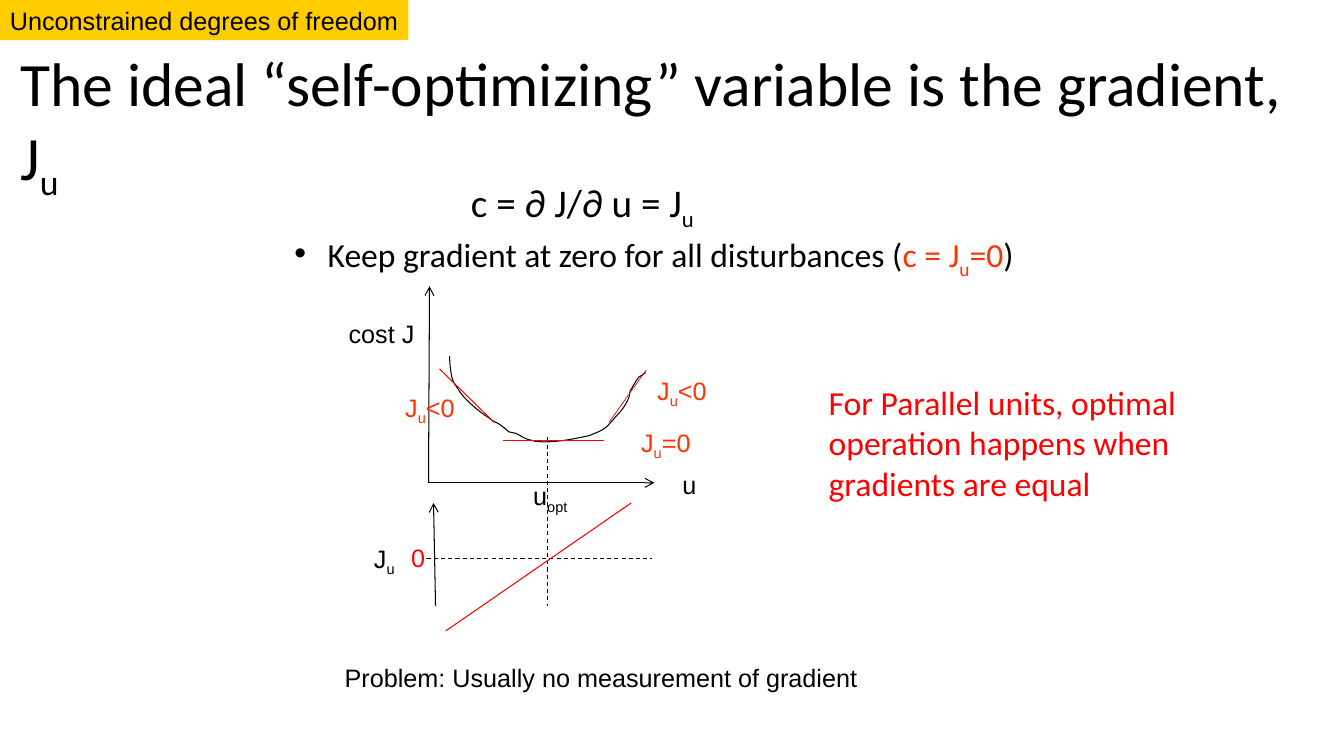
from lxml.etree import SubElement
from pptx import Presentation
from pptx.dml.color import RGBColor
from pptx.enum.dml import MSO_LINE
from pptx.enum.shapes import MSO_CONNECTOR, MSO_SHAPE
from pptx.enum.text import MSO_ANCHOR, MSO_AUTO_SIZE, PP_ALIGN
from pptx.oxml.ns import qn
from pptx.util import Inches, Pt

COLORS = {
    "black": "000000",
    "red": "FF0000",
    "orange": "FF3300",
    "yellow": "FFCC00",
}


def write_text(paragraph, text, size, font, color="black"):
    paragraph.font.size = Pt(size)
    paragraph.font.name = font
    paragraph.alignment = PP_ALIGN.LEFT
    for index, part in enumerate(text.split("_")):
        if part:
            run = paragraph.add_run()
            run.text = part
            run.font.color.rgb = RGBColor.from_string(COLORS[color])
            if index % 2:
                run.font._element.set("baseline", "-25000")


def add_line(start, end, color, width=0.75, dashed=False, arrow=False):
    connector = slide.shapes.add_connector(
        MSO_CONNECTOR.STRAIGHT, *(Inches(value) for value in (*start, *end)))
    connector.line.color.rgb = RGBColor.from_string(COLORS[color])
    connector.line.width = Pt(width)
    if dashed:
        connector.line.dash_style = MSO_LINE.DASH
    if arrow:
        SubElement(connector.line._get_or_add_ln(), qn("a:tailEnd"), type="arrow")
    SubElement(connector._element.spPr, qn("a:effectLst"))


presentation = Presentation()
presentation.slide_width = Inches(13.33)
presentation.slide_height = Inches(7.5)
slide = presentation.slides.add_slide(presentation.slide_layouts[1])

title, body = slide.placeholders
for placeholder, box in ((title, (0.1, 0.51, 13.24, 1.45)), (body, (2.32, 1.41, 9.29, 1.23))):
    placeholder.left, placeholder.top, placeholder.width, placeholder.height = map(Inches, box)
    placeholder.text_frame.auto_size = MSO_AUTO_SIZE.NONE

title.text_frame.vertical_anchor = MSO_ANCHOR.MIDDLE
heading = title.text_frame.paragraphs[0]
heading.line_spacing = 0.9
write_text(heading, "The ideal “self-optimizing” variable is the gradient, J_u_", 44, "Calibri")

body.text_frame.vertical_anchor = MSO_ANCHOR.TOP
body.text_frame.margin_top = Inches(0.37)
formula = body.text_frame.paragraphs[0]
write_text(formula, "c = ∂ J/∂ u = J_u_", 28, "Calibri")
formula.space_before = Pt(0)
formula.line_spacing = 0.9
formula_properties = formula._p.get_or_add_pPr()
formula_properties.set("marL", str(Inches(2.25)))
formula_properties.set("indent", "0")
SubElement(formula_properties, qn("a:buNone"))
formula_properties.append(formula_properties.find(qn("a:defRPr")))

policy = body.text_frame.add_paragraph()
policy.level = 1
policy.space_before = Pt(5)
policy.line_spacing = 0.9
for text, color in (
    ("Keep gradient at zero for all disturbances (", "black"),
    ("c = J_u_=0", "orange"),
    (")", "black"),
):
    write_text(policy, text, 24, "Calibri", color)
policy_properties = policy._p.get_or_add_pPr()
policy_properties.set("marL", str(Inches(0.83)))
policy_properties.set("indent", str(Inches(-0.33)))
SubElement(policy_properties, qn("a:buFont"), typeface="Arial")
SubElement(policy_properties, qn("a:buChar"), char="•")
policy_properties.append(policy_properties.find(qn("a:defRPr")))

for paragraph in (heading, formula, policy):
    for run in paragraph.runs:
        run.font.size = paragraph.font.size
        run.font.name = "Calibri"

banner = slide.shapes.add_shape(MSO_SHAPE.RECTANGLE, 0, 0, Inches(4.05), Inches(0.4))
banner.shadow.inherit = False
banner.fill.solid()
banner.fill.fore_color.rgb = RGBColor.from_string(COLORS["yellow"])
banner.line.fill.background()
banner.text_frame.word_wrap = False
write_text(banner.text_frame.paragraphs[0], "Unconstrained degrees of freedom", 18, "Arial")

curve_start = (4.46, 3.53)
curve_segments = [
    ((4.46, 3.59), (4.47, 3.76), (4.51, 3.81)),
    ((4.53, 3.84), (4.55, 3.87), (4.57, 3.9)),
    ((4.63, 3.98), (4.74, 4.07), (4.81, 4.12)),
    ((4.83, 4.13), (4.85, 4.15), (4.87, 4.16)),
    ((4.89, 4.18), (4.92, 4.19), (4.94, 4.2)),
    ((5.1, 4.31), (4.99, 4.27), (5.12, 4.3)),
    ((5.16, 4.32), (5.2, 4.35), (5.24, 4.36)),
    ((5.41, 4.43), (5.8, 4.33), (5.85, 4.32)),
    ((6.01, 4.25), (5.98, 4.28), (6.12, 4.12)),
    ((6.18, 4.06), (6.21, 4.01), (6.24, 3.94)),
    ((6.24, 3.92), (6.25, 3.89), (6.25, 3.88)),
    ((6.28, 3.83), (6.3, 3.79), (6.33, 3.75)),
    ((6.34, 3.73), (6.37, 3.73), (6.38, 3.71)),
    ((6.39, 3.71), (6.4, 3.7), (6.4, 3.69)),
]
steps = 8
curve_points = []
segment_start = curve_start
for first_control, second_control, segment_end in curve_segments:
    for step in range(1, steps + 1):
        t = step / steps
        weights = ((1 - t) ** 3, 3 * t * (1 - t) ** 2, 3 * t ** 2 * (1 - t), t ** 3)
        corners = (segment_start, first_control, second_control, segment_end)
        curve_points.append(tuple(
            Inches(sum(weight * corner[axis] for weight, corner in zip(weights, corners)))
            for axis in (0, 1)))
    segment_start = segment_end
builder = slide.shapes.build_freeform(*map(Inches, curve_start))
builder.add_line_segments(curve_points, close=False)
cost_curve = builder.convert_to_shape()
cost_curve.shadow.inherit = False
cost_curve.fill.background()
cost_curve.line.color.rgb = RGBColor.from_string(COLORS["black"])
cost_curve.line.width = Pt(0.75)

for start, end in (
    ((4.25, 4.79), (6.49, 4.79)),
    ((4.25, 4.79), (4.26, 2.84)),
    ((4.32, 6.01), (4.3, 4.99)),
):
    add_line(start, end, "black", arrow=True)
for start, end in (((5.43, 4.34), (5.43, 6.01)), ((4.23, 5.54), (6.47, 5.54))):
    add_line(start, end, "black", dashed=True)
for start, end, width in (
    ((4.99, 4.37), (5.99, 4.37), 0.5),
    ((4.36, 3.66), (4.9, 4.19), 0.75),
    ((6.04, 4.19), (6.41, 3.67), 0.5),
    ((4.42, 6.26), (6.26, 4.99), 0.75),
):
    add_line(start, end, "red", width)

for text, box, size, font, color in (
    ("u", (6.67, 4.61, 0.34, 0.4), 18, "Arial", "black"),
    ("cost J", (3.36, 3.11, 0.86, 0.4), 18, "Arial", "black"),
    ("J_u_=0", (6.26, 4.19, 0.71, 0.4), 18, "Arial", "orange"),
    ("J_u_<0", (3.92, 3.84, 0.71, 0.4), 18, "Arial", "orange"),
    ("J_u_<0", (6.42, 3.67, 0.71, 0.4), 18, "Arial", "orange"),
    ("u_opt_", (5.19, 4.72, 0.58, 0.4), 18, "Arial", "black"),
    ("J_u_", (3.61, 5.34, 0.42, 0.4), 18, "Arial", "black"),
    ("0", (3.98, 5.33, 0.34, 0.4), 18, "Arial", "red"),
    ("Problem: Usually no measurement of gradient", (3.32, 6.52, 5.33, 0.71), 18, "Arial", "black"),
    ("For Parallel units, optimal operation happens when gradients are equal",
     (8.12, 3.74, 4.72, 1.31), 24, "Calibri", "red"),
):
    label = slide.shapes.add_textbox(*map(Inches, box))
    label.text_frame.word_wrap = size == 24
    write_text(label.text_frame.paragraphs[0], text, size, font, color)

presentation.save("out.pptx")
